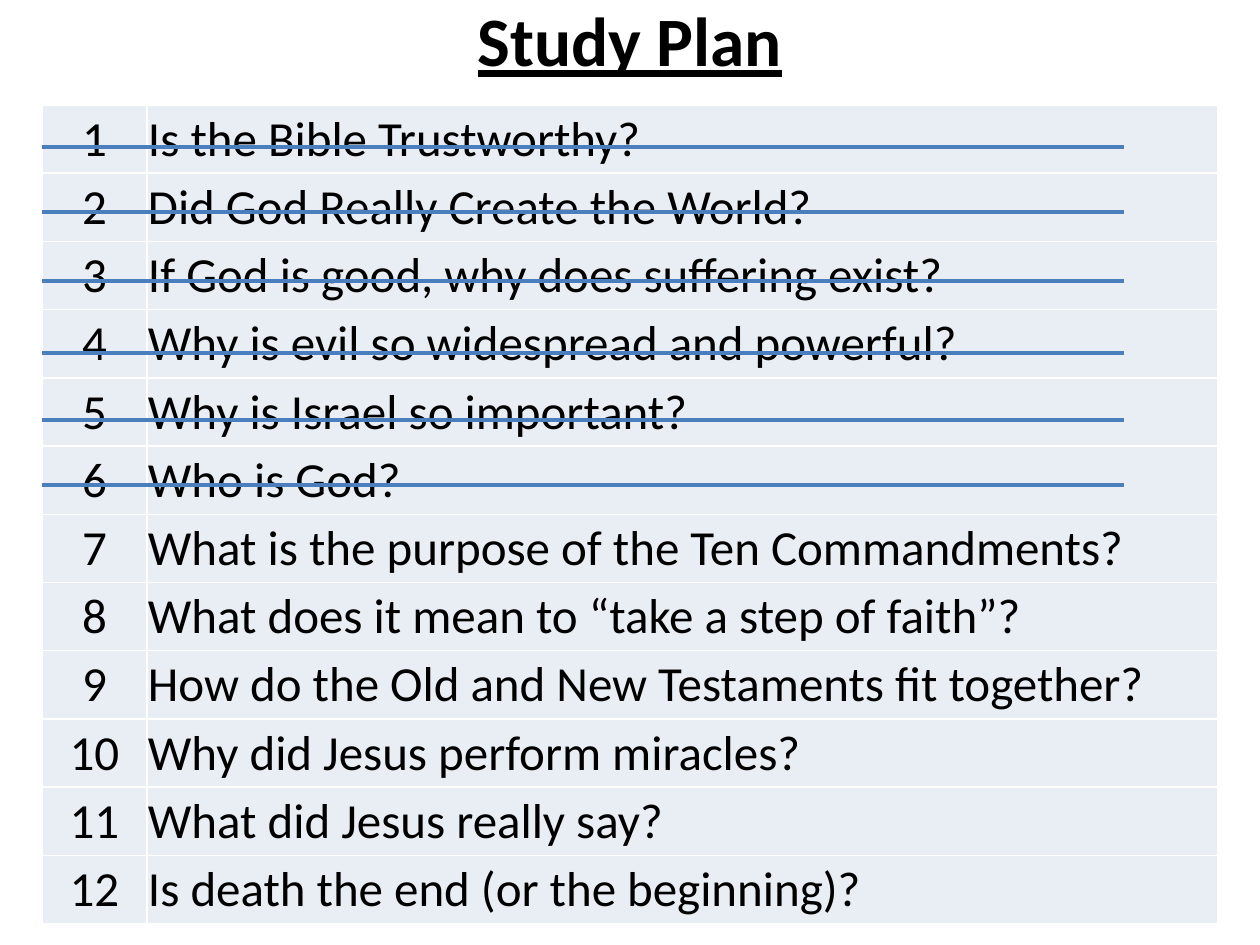
from lxml import etree
from pptx import Presentation
from pptx.dml.color import RGBColor
from pptx.enum.shapes import MSO_CONNECTOR
from pptx.enum.text import MSO_ANCHOR, PP_ALIGN
from pptx.oxml.ns import qn
from pptx.util import Emu, Pt

LEFT, CENTER = PP_ALIGN.LEFT, PP_ALIGN.CENTER
MIDDLE = MSO_ANCHOR.MIDDLE
STRAIGHT = MSO_CONNECTOR.STRAIGHT

COLORS = {"text": "000000", "cell": "E9EDF4", "border": "FFFFFF", "strike": "4B7EBC"}
TITLE_FORMAT = {"name": "Calibri", "size": Pt(39.6), "bold": True, "underline": True}
CELL_FORMAT = {"name": "Calibri", "size": Pt(28), "bold": False}
CELL_LAYOUT = {
    "margin_left": 1, "margin_right": 1, "margin_top": 1, "margin_bottom": 0,
}
TOPICS = [
    "Is the Bible Trustworthy?",
    "Did God Really Create the World?",
    "If God is good, why does suffering exist?",
    "Why is evil so widespread and powerful?",
    "Why is Israel so important?",
    "Who is God?",
    "What is the purpose of the Ten Commandments?",
    "What does it mean to “take a step of faith”?",
    "How do the Old and New Testaments fit together?",
    "Why did Jesus perform miracles?",
    "What did Jesus really say?",
    "Is death the end (or the beginning)?",
]
STRIKE_OFFSETS = [42, 107, 176, 248, 315, 380]


def px(n):
    return Emu(round(n * 914400 / 126))


def color(key):
    return RGBColor.from_string(COLORS[key])


def write(tf, text, align, formats):
    p = tf.paragraphs[0]
    p.alignment = align
    r = p.add_run()
    r.text = text
    for key, value in formats.items():
        setattr(r.font, key, value)
    r.font.color.rgb = color("text")


def add_title(s, x, y, w, h):
    tf = s.shapes.add_textbox(px(x), px(y), px(w), px(h)).text_frame
    tf.word_wrap = True
    tf.vertical_anchor = MIDDLE
    write(tf, "Study Plan", CENTER, TITLE_FORMAT)


def add_borders(cell):
    tc_pr = cell._tc.get_or_add_tcPr()
    for i, side in enumerate(("lnL", "lnR", "lnT", "lnB")):
        ln = etree.Element(qn(f"a:{side}"), w=str(Pt(1)))
        fill = etree.SubElement(ln, qn("a:solidFill"))
        etree.SubElement(fill, qn("a:srgbClr"), val=COLORS["border"])
        tc_pr.insert(i, ln)


def fill_cell(cell, text, align):
    write(cell.text_frame, text, align, CELL_FORMAT)
    cell.vertical_anchor = MIDDLE
    for key, value in CELL_LAYOUT.items():
        setattr(cell, key, px(value))
    cell.fill.solid()
    cell.fill.fore_color.rgb = color("cell")
    add_borders(cell)


def add_topics(s, x, y, w, h):
    number_w = 105
    frame = s.shapes.add_table(len(TOPICS), 2, px(x), px(y), px(w), px(h))
    table = frame.table
    table.first_row = table.horz_banding = False
    table.columns[0].width = px(number_w)
    table.columns[1].width = px(w - number_w)
    for i, topic in enumerate(TOPICS):
        table.rows[i].height = px(h / len(TOPICS))
        fill_cell(table.cell(i, 0), str(i + 1), CENTER)
        fill_cell(table.cell(i, 1), topic, LEFT)


def add_strikes(s, x, y, w):
    for offset in STRIKE_OFFSETS:
        line_y = px(y + offset)
        sp = s.shapes.add_connector(STRAIGHT, px(x), line_y, px(x + w), line_y)
        sp.line.color.rgb = color("strike")
        sp.line.width = Pt(2.25)
        etree.SubElement(sp._element.spPr, qn("a:effectLst"))


def main():
    prs = Presentation()
    prs.slide_width, prs.slide_height = px(1260), px(945)
    s = prs.slides.add_slide(prs.slide_layouts[6])
    add_title(s, 63, -10, 1134, 98)
    add_topics(s, 42, 105, 1176, 819)
    add_strikes(s, 42, 105, 1082)
    prs.save("out.pptx")


if __name__ == "__main__":
    main()
